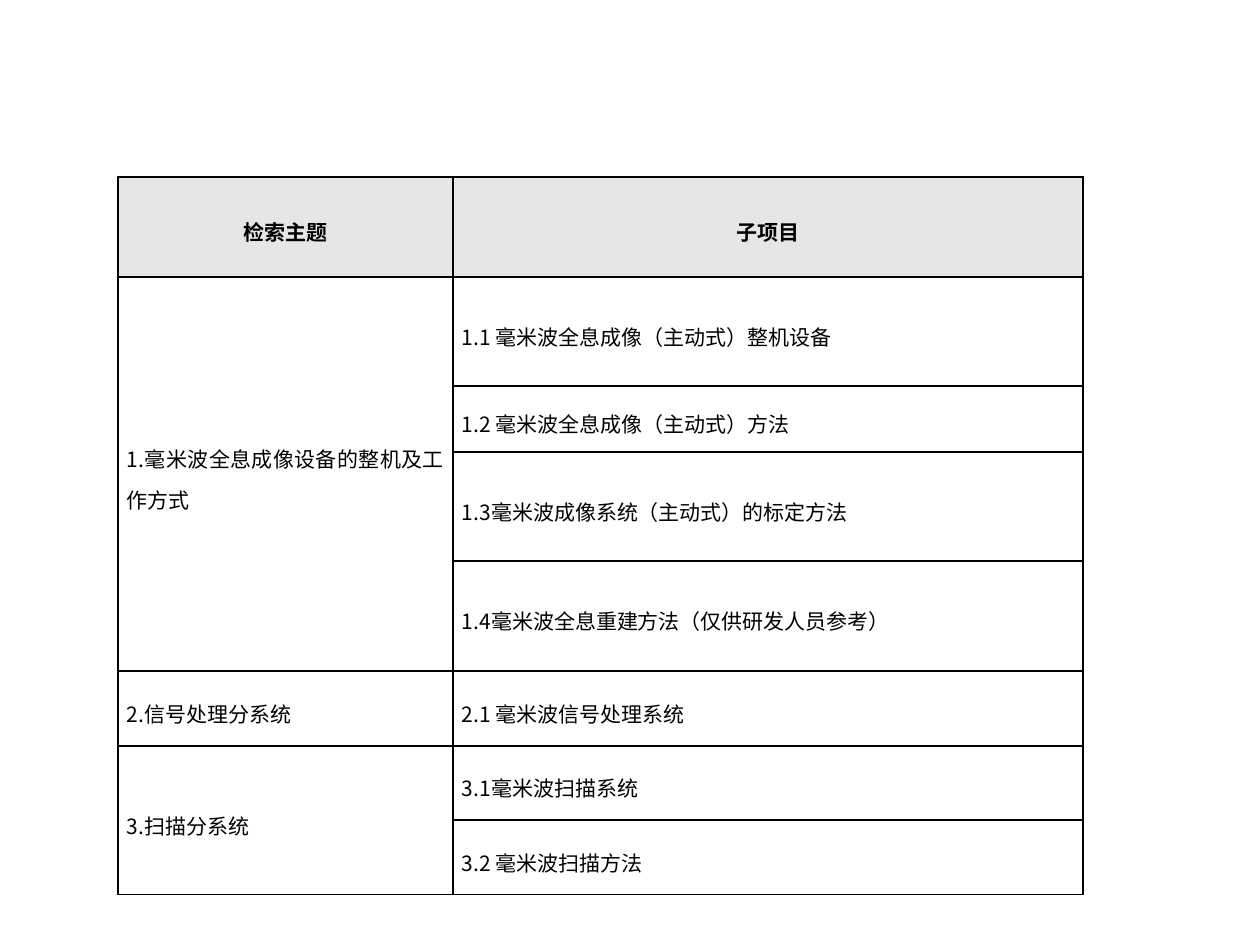
from lxml.etree import SubElement
from pptx import Presentation
from pptx.dml.color import RGBColor
from pptx.enum.lang import MSO_LANGUAGE_ID
from pptx.enum.text import MSO_ANCHOR, PP_ALIGN
from pptx.oxml.ns import qn
from pptx.util import Emu, Pt

EMU_PER_PX = 914400 / 126
LABEL_FONT = "Noto Sans CJK SC"
BODY_FONT = "Calibri"

COLUMN_WIDTHS = [335, 630]
ROW_HEIGHTS = [100, 109, 66, 109, 110, 75, 74, 75]
HEADINGS = ["检索主题", "子项目"]
# Each topic is (label, text) with its sub-items in the same form
TOPICS = [
    (("1.毫米波全息成像设备的", "整机及工作方式"), [
        ("1.1 ", "毫米波全息成像（主动式）整机设备"),
        ("1.2 ", "毫米波全息成像（主动式）方法"),
        ("1.3", "毫米波成像系统（主动式）的标定方法"),
        ("1.4", "毫米波全息重建方法（仅供研发人员参考）"),
    ]),
    (("2.", "信号处理分系统"), [("2.1 ", "毫米波信号处理系统")]),
    (("3.", "扫描分系统"), [
        ("3.1", "毫米波扫描系统"),
        ("3.2 ", "毫米波扫描方法"),
    ]),
]


def px(length):
    return Emu(round(length * EMU_PER_PX))


def color(hex_string):
    return RGBColor.from_string(hex_string)


def add_borders(cell, hex_string, width):
    properties = cell._tc.get_or_add_tcPr()
    for position, side in enumerate(("lnL", "lnR", "lnT", "lnB")):
        line = SubElement(properties, qn(f"a:{side}"), w=str(Pt(width)))
        properties.insert(position, line)
        fill = SubElement(line, qn("a:solidFill"))
        SubElement(fill, qn("a:srgbClr"), val=hex_string)


def style_cell(cell, fill):
    cell.margin_left = cell.margin_right = px(9)
    cell.margin_top = cell.margin_bottom = 0
    cell.vertical_anchor = MSO_ANCHOR.MIDDLE
    if fill:
        cell.fill.solid()
        cell.fill.fore_color.rgb = color(fill)
    else:
        cell.fill.background()
    add_borders(cell, "000000", 1)


def write_cell(cell, parts, align, bold=False):
    paragraph = cell.text_frame.paragraphs[0]
    paragraph.alignment = align
    paragraph.line_spacing = Pt(23)
    paragraph.font.size = Pt(12)
    paragraph.font.bold = bold
    paragraph.font.color.rgb = color("000000")
    for text, font_name in parts:
        run = paragraph.add_run()
        run.text = text
        run.font.name = font_name
        run.font.language_id = MSO_LANGUAGE_ID.SIMPLIFIED_CHINESE


def write_item(cell, item):
    write_cell(cell, zip(item, (LABEL_FONT, BODY_FONT)), PP_ALIGN.JUSTIFY)


def add_topic_table(slide, left, top, width, height):
    table = slide.shapes.add_table(
        len(ROW_HEIGHTS), len(COLUMN_WIDTHS),
        px(left), px(top), px(width), px(height)).table
    table.first_row = table.horz_banding = False
    for column, column_width in zip(table.columns, COLUMN_WIDTHS):
        column.width = px(column_width)
    for row_index, (row, row_height) in enumerate(zip(table.rows, ROW_HEIGHTS)):
        row.height = px(row_height)
        for cell in row.cells:
            style_cell(cell, "E6E6E6" if row_index == 0 else None)

    # Heading row
    for column_index, heading in enumerate(HEADINGS):
        write_cell(table.cell(0, column_index), [(heading, BODY_FONT)],
                   PP_ALIGN.CENTER, bold=True)

    # Topics span the rows of their sub-items
    first_row = 1
    for topic, sub_items in TOPICS:
        topic_cell = table.cell(first_row, 0)
        if len(sub_items) > 1:
            topic_cell.merge(table.cell(first_row + len(sub_items) - 1, 0))
        write_item(topic_cell, topic)
        for row_index, sub_item in enumerate(sub_items, first_row):
            write_item(table.cell(row_index, 1), sub_item)
        first_row += len(sub_items)


def main():
    presentation = Presentation()
    presentation.slide_width = px(1260)
    presentation.slide_height = px(945)
    slide = presentation.slides.add_slide(presentation.slide_layouts[6])
    add_topic_table(slide, 118, 177, sum(COLUMN_WIDTHS), sum(ROW_HEIGHTS))
    presentation.save("out.pptx")


if __name__ == "__main__":
    main()
